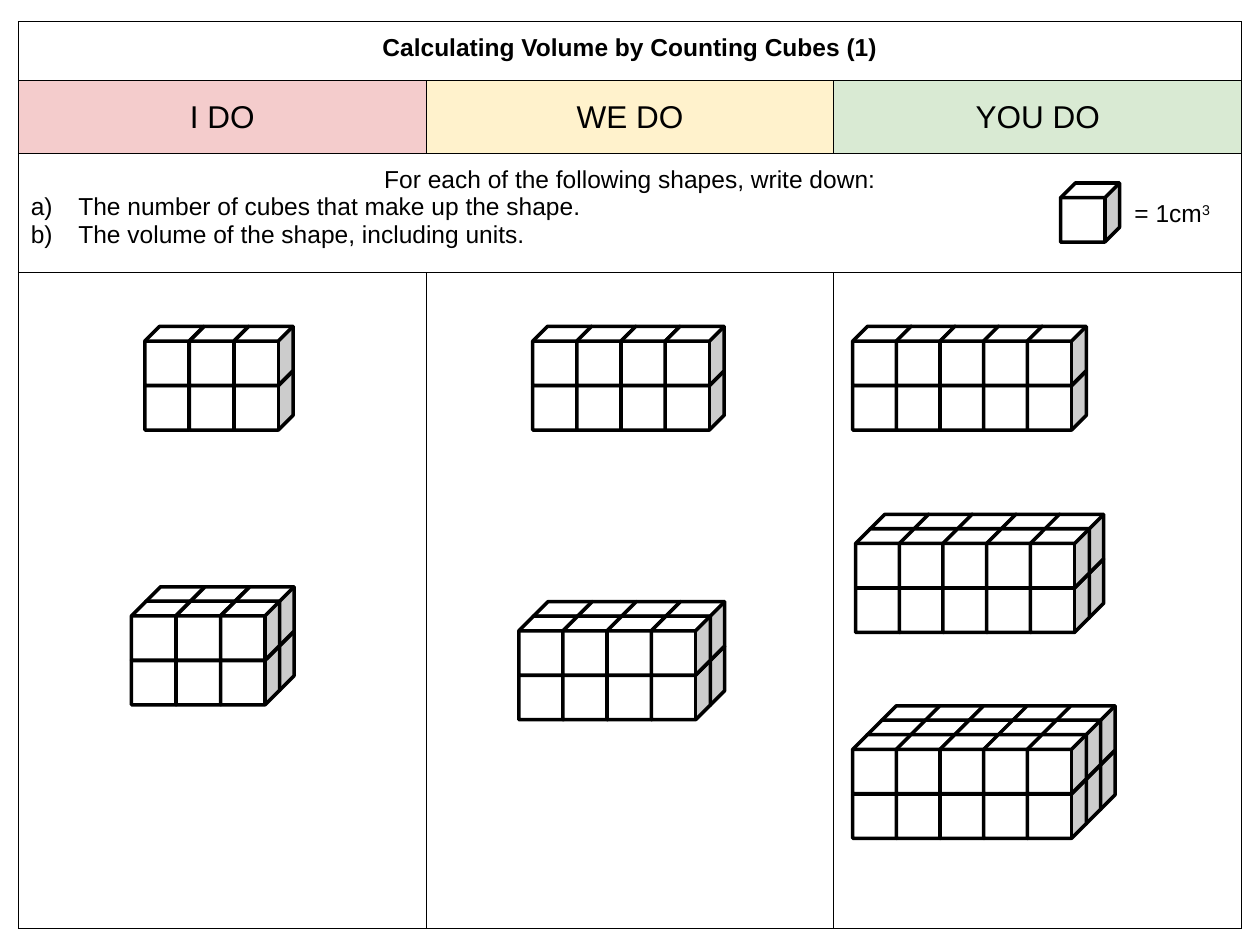
from lxml.etree import SubElement
from pptx import Presentation
from pptx.dml.color import RGBColor
from pptx.enum.shapes import MSO_SHAPE
from pptx.enum.text import MSO_ANCHOR, MSO_AUTO_SIZE, PP_ALIGN
from pptx.oxml.ns import qn
from pptx.util import Cm, Pt

FONT = "Arial"
COLS = [8.22] * 3
ROWS = [1.19, 1.47, 2.4, 13.22]
HEADS = [("I DO", "F4CCCC"), ("WE DO", "FFF2CC"), ("YOU DO", "D9EAD3")]
TASK = [
    "For each of the following shapes, write down:",
    "The number of cubes that make up the shape.",
    "The volume of the shape, including units.",
]
# Space in points above each question number, by column
GAPS = [[0, 141.5], [0, 141.5], [0, 78.5, 94.5]]
# Left, top, cubes across, cubes deep, pitch across
STACKS = [
    (2.92, 6.58, 3, 1, 0.9),
    (2.65, 11.83, 3, 2, 0.9),
    (10.74, 6.58, 4, 1, 0.89),
    (10.46, 12.13, 4, 2, 0.89),
    (17.19, 6.58, 5, 1, 0.88),
    (17.25, 10.37, 5, 2, 0.88),
    (17.19, 14.23, 5, 3, 0.88),
]
SIDE, RISE, DEPTH = 1.19, 0.9, 0.29


def color(code):
    return RGBColor.from_string(code)


def style(frame, size=14, bold=False):
    for para in frame.paragraphs:
        for run in para.runs:
            font = run.font
            font.name, font.size, font.bold = FONT, Pt(size), bold
            font.color.rgb = color("000000")


def border(cell):
    """Rule all four sides of a cell in thin black."""
    props = cell._tc.get_or_add_tcPr()
    for i, side in enumerate(("lnL", "lnR", "lnT", "lnB")):
        line = props.makeelement(qn(f"a:{side}"), {"w": str(Pt(0.75))})
        fill = SubElement(line, qn("a:solidFill"))
        SubElement(fill, qn("a:srgbClr"), val="000000")
        props.insert(i, line)


def number(para, kind):
    """Number a paragraph automatically with a hanging indent."""
    props = para._p.get_or_add_pPr()
    props.set("marL", str(Cm(0.96)))
    props.set("indent", str(-Cm(0.96)))
    tint = SubElement(props, qn("a:buClr"))
    SubElement(tint, qn("a:srgbClr"), val="000000")
    SubElement(props, qn("a:buFont"), typeface=FONT)
    SubElement(props, qn("a:buAutoNum"), type=kind)


def grid(slide, left, top):
    """Place the ruled table and return it."""
    table = slide.shapes.add_table(
        len(ROWS), len(COLS), Cm(left), Cm(top), Cm(sum(COLS)), Cm(sum(ROWS))
    ).table
    table.first_row = table.horz_banding = False
    for col, width in zip(table.columns, COLS):
        col.width = Cm(width)
    for row, height in zip(table.rows, ROWS):
        row.height = Cm(height)
    for cell in table.iter_cells():
        cell.margin_left = cell.margin_right = Cm(0.25)
        cell.margin_top = cell.margin_bottom = Cm(0.25)
        cell.fill.background()
        border(cell)
    for row in (0, 2):
        table.cell(row, 0).merge(table.cell(row, 2))
    return table


def fill_heads(table):
    title = table.cell(0, 0).text_frame
    title.text = "Calculating Volume by Counting Cubes (1)"
    title.paragraphs[0].alignment = PP_ALIGN.CENTER
    style(title, bold=True)
    for col, (text, shade) in enumerate(HEADS):
        cell = table.cell(1, col)
        cell.text_frame.text = text
        cell.text_frame.paragraphs[0].alignment = PP_ALIGN.CENTER
        cell.vertical_anchor = MSO_ANCHOR.MIDDLE
        cell.fill.solid()
        cell.fill.fore_color.rgb = color(shade)
        style(cell.text_frame, 18)


def fill_task(table):
    frame = table.cell(2, 0).text_frame
    frame.text = "\n".join(TASK)
    lead, *parts = frame.paragraphs
    lead.alignment = PP_ALIGN.CENTER
    for para in parts:
        number(para, "alphaLcParenR")
    style(frame)


def fill_work(table):
    """Number the answer spaces in each column."""
    for col, gaps in enumerate(GAPS):
        frame = table.cell(3, col).text_frame
        for _ in gaps[1:]:
            frame.add_paragraph()
        for para, gap in zip(frame.paragraphs, gaps):
            para.space_before = Pt(gap)
            number(para, "arabicParenR")
            end = SubElement(para._p, qn("a:endParaRPr"), sz="1400")
            SubElement(end, qn("a:latin"), typeface=FONT)


def cube(slide, left, top):
    shape = slide.shapes.add_shape(
        MSO_SHAPE.CUBE, Cm(left), Cm(top), Cm(SIDE), Cm(SIDE)
    )
    shape.shadow.inherit = False
    shape.fill.solid()
    shape.fill.fore_color.rgb = color("FFFFFF")
    shape.line.color.rgb = color("000000")
    shape.line.width = Pt(2)
    SubElement(shape.line._get_or_add_ln(), qn("a:round"))


def stack(slide, left, top, wide, deep, pitch, high=2):
    """Pile cubes from back to front, bottom to top, left to right."""
    for back in reversed(range(deep)):
        for row in reversed(range(high)):
            for col in range(wide):
                x = left + col * pitch + back * DEPTH
                y = top + row * RISE + (deep - 1 - back) * DEPTH
                cube(slide, x, y)


def unit(slide, left, top):
    """Show one cube beside its volume."""
    cube(slide, left, top)
    box = slide.shapes.add_textbox(
        Cm(left + 1.24), Cm(top + 0.18), Cm(2.06), Cm(0.86)
    )
    frame = box.text_frame
    frame.word_wrap = False
    frame.auto_size = MSO_AUTO_SIZE.SHAPE_TO_FIT_TEXT
    frame.text = "= 1cm"
    power = frame.paragraphs[0].add_run()
    power.text = "3"
    style(frame)
    power.font._element.set("baseline", "30000")


def main():
    deck = Presentation()
    deck.slide_width, deck.slide_height = Cm(25.4), Cm(19.05)
    slide = deck.slides.add_slide(deck.slide_layouts[6])
    table = grid(slide, 0.37, 0.44)
    fill_heads(table)
    fill_task(table)
    fill_work(table)
    unit(slide, 21.38, 3.69)
    for place in STACKS:
        stack(slide, *place)
    deck.save("out.pptx")


if __name__ == "__main__":
    main()
